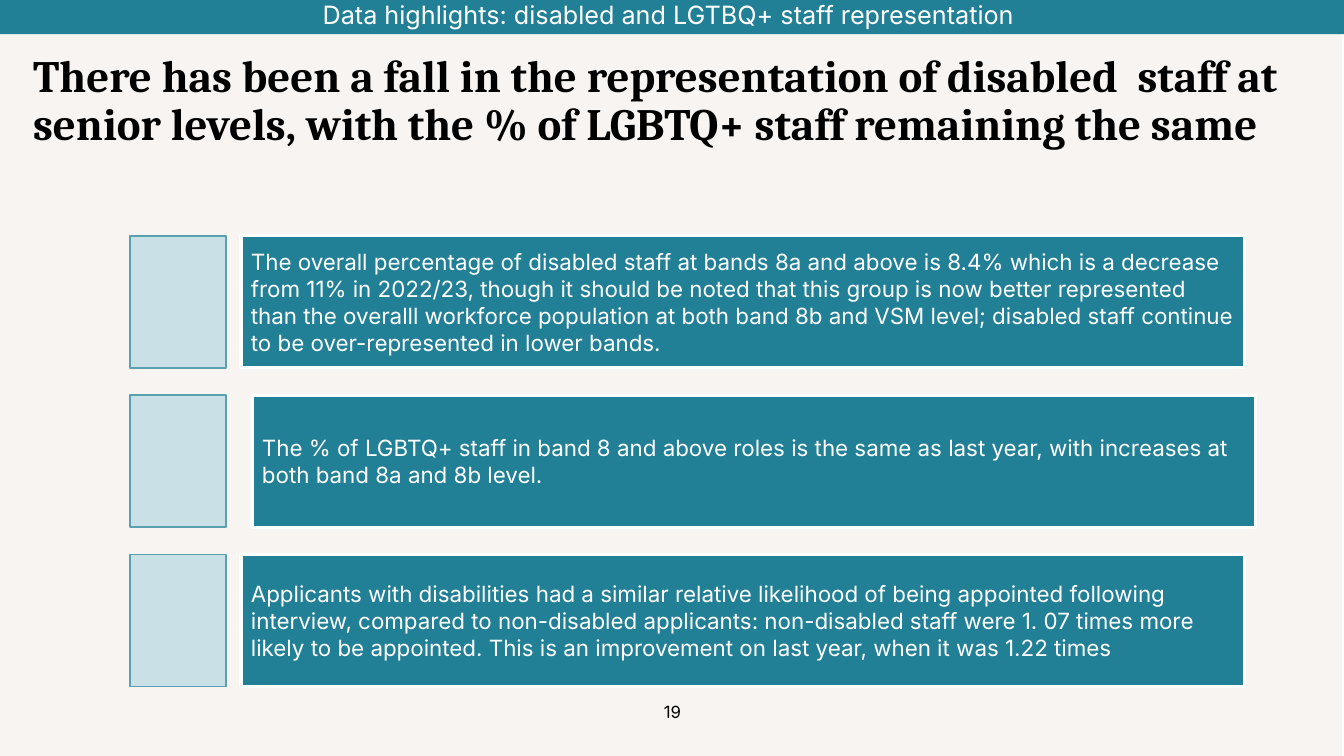
from typing import NamedTuple, Optional

from pptx import Presentation
from pptx.dml.color import RGBColor
from pptx.enum.shapes import MSO_SHAPE as SHAPE
from pptx.enum.text import MSO_ANCHOR as ANCHOR, PP_ALIGN as ALIGN
from pptx.util import Inches, Pt

COLORS = {
    "paper": "F7F4F1",
    "teal": "228096",
    "pale": "C8E0E6",
    "edge": "59A0B0",
    "white": "FFFFFF",
    "black": "000000",
}


class Box(NamedTuple):
    left: float
    top: float
    width: float
    height: float


class Highlight(NamedTuple):
    left: float
    top: float
    text: str
    after: float = 0


ROW_H = 1.31
HIGHLIGHTS = [
    Highlight(2.39, 2.34, "The overall percentage of disabled staff at bands 8a and above is 8.4% "
              "which is a decrease from 11% in 2022/23, though it should be noted that this group "
              "is now better represented than the overalll workforce population at both band 8b "
              "and VSM level; disabled staff continue to be over-represented in lower bands."),
    Highlight(2.5, 3.92, "The % of LGBTQ+ staff in band 8 and above roles is the same as last "
              "year, with increases at both band 8a and 8b level.", 6),
    Highlight(2.39, 5.5, "Applicants with disabilities had a similar relative likelihood of being "
              "appointed following interview, compared to non-disabled applicants: non-disabled "
              "staff were 1. 07 times more likely to be appointed. This is an improvement on last "
              "year, when it was 1.22 times", 6),
]


def rgb(name: str) -> RGBColor:
    return RGBColor.from_string(COLORS[name])


def add_rect(s, box: Box, fill: str, line: Optional[str] = None, weight: float = 1):
    sp = s.shapes.add_shape(SHAPE.RECTANGLE, *map(Inches, box))
    sp.shadow.inherit = False
    sp.fill.solid()
    sp.fill.fore_color.rgb = rgb(fill)
    if line:
        sp.line.color.rgb = rgb(line)
        sp.line.width = Pt(weight)
    else:
        sp.line.fill.background()
    return sp


def add_label(s, box: Box):
    return s.shapes.add_textbox(*map(Inches, box))


def write(sp, text: str, *, size: float, font: str = "Inter", color: str = "white",
          bold: bool = False, align=ALIGN.LEFT, anchor=ANCHOR.MIDDLE,
          spacing: float = 1.0, after: float = 0) -> None:
    tf = sp.text_frame
    tf.word_wrap = True
    tf.vertical_anchor = anchor
    p = tf.paragraphs[0]
    p.alignment = align
    p.line_spacing = spacing
    p.space_after = Pt(after)
    r = p.add_run()
    r.text = text
    r.font.size = Pt(size)
    r.font.name = font
    r.font.bold = bold
    r.font.color.rgb = rgb(color)


def main() -> None:
    prs = Presentation()
    prs.slide_width, prs.slide_height = Inches(13.33), Inches(7.5)
    s = prs.slides.add_slide(prs.slide_layouts[6])

    add_rect(s, Box(-0.02, 0, 13.33, 7.5), "paper")
    write(add_label(s, Box(5.17, 6.91, 3, 0.4)), "19", size=12, color="black",
          align=ALIGN.CENTER, anchor=ANCHOR.TOP)
    write(add_label(s, Box(0.23, 0.48, 12.86, 1.27)),
          "There has been a fall in the representation of disabled  staff at senior levels, "
          "with the % of LGBTQ+ staff remaining the same",
          size=32, font="Cambria", color="black", bold=True, anchor=ANCHOR.TOP, spacing=0.9)

    for h in HIGHLIGHTS:
        add_rect(s, Box(1.29, h.top, 0.95, ROW_H), "pale", "edge")
        panel = add_rect(s, Box(h.left, h.top, 9.95, ROW_H), "teal", "white", 2.25)
        write(panel, h.text, size=16, after=h.after)

    banner = add_rect(s, Box(0, -0.06, 13.33, 0.4), "teal")
    write(banner, "Data highlights: disabled and LGTBQ+ staff representation ", size=18,
          align=ALIGN.CENTER)

    prs.save("out.pptx")


if __name__ == "__main__":
    main()
